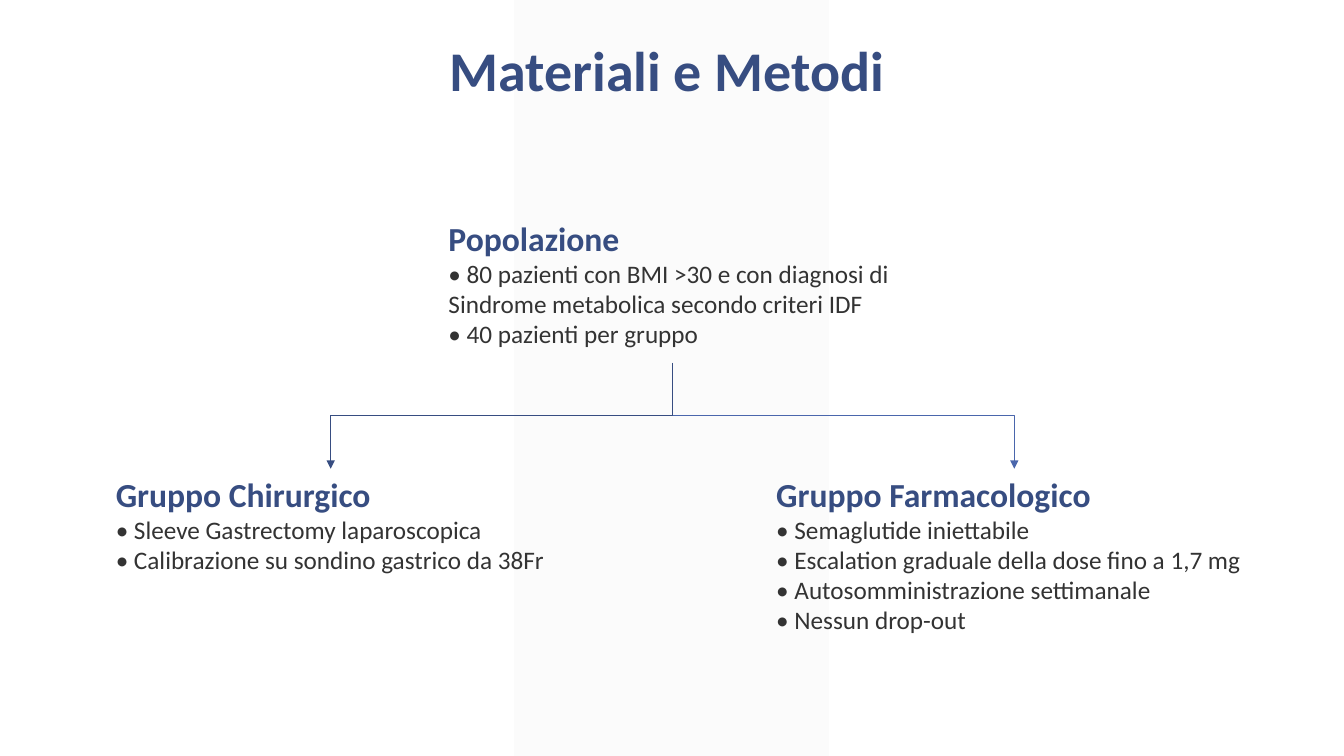
from lxml import etree
from pptx import Presentation, util as u
from pptx.dml.color import RGBColor
from pptx.enum import shapes, text
from pptx.oxml import ns

THEME = {
    "font": "Calibri",
    "navy": RGBColor.from_string("374D81"),
    "blue": RGBColor.from_string("4A66AC"),
    "body": RGBColor.from_string("333333"),
    "band": RGBColor.from_string("F2F2F2"),
    "title_size": u.Pt(40),
    "heading_size": u.Pt(24),
    "body_size": u.Pt(18),
}
TITLE = {"size": THEME["title_size"], "bold": True, "color": THEME["navy"]}
HEADING = {"size": THEME["heading_size"], "bold": True, "color": THEME["navy"]}
BODY = {"size": THEME["body_size"], "bold": False, "color": THEME["body"]}


def write(paragraph, wording, style):
    run = paragraph.add_run()
    run.text = wording
    run.font.name = THEME["font"]
    run.font.color.rgb = style["color"]
    for key in ("size", "bold"):
        setattr(run.font, key, style[key])


def add_xml(parent, tag, **attributes):
    return etree.SubElement(parent, ns.qn(tag), attributes)


deck = Presentation()
deck.slide_width, deck.slide_height = u.Inches(13.33), u.Inches(7.5)
slide = deck.slides.add_slide(deck.slide_layouts[5])

band = slide.shapes.add_shape(
    shapes.MSO_SHAPE.PARALLELOGRAM, u.Inches(5.1), 0, u.Inches(3.12), deck.slide_height
)
band.adjustments[0] = 0
band.shadow.inherit = False
band.line.fill.background()
band.fill.solid()
band.fill.fore_color.rgb = THEME["band"]
band_color = band.fill._xPr.find(ns.qn("a:solidFill"))[0]
add_xml(band_color, "a:alpha", val="30000")
slide.shapes._spTree.insert(2, band._element)

heading = slide.shapes.title
place = {"left": 4.36, "top": 0.3, "width": 4.61, "height": 0.66}
for side, inches in place.items():
    setattr(heading, side, u.Inches(inches))
frame_format = {
    "word_wrap": True,
    "auto_size": text.MSO_AUTO_SIZE.NONE,
    "vertical_anchor": text.MSO_ANCHOR.TOP,
}
for key, value in frame_format.items():
    setattr(heading.text_frame, key, value)
heading_line = heading.text_frame.paragraphs[0]
heading_line.alignment = text.PP_ALIGN.JUSTIFY
heading_line.line_spacing = 1.0
write(heading_line, "Materiali e Metodi", TITLE)

groups = [
    ((4.35, 2.11, 4.64, 1.48), "Popolazione", [
        "80 pazienti con BMI >30 e con diagnosi di Sindrome metabolica secondo criteri IDF",
        "40 pazienti per gruppo",
    ]),
    ((1.05, 4.65, 4.46, 1.37), "Gruppo Chirurgico", [
        "Sleeve Gastrectomy laparoscopica",
        "Calibrazione su sondino gastrico da 38Fr",
    ]),
    ((7.6, 4.65, 4.92, 1.62), "Gruppo Farmacologico", [
        "Semaglutide iniettabile",
        "Escalation graduale della dose fino a 1,7 mg",
        "Autosomministrazione settimanale",
        "Nessun drop-out",
    ]),
]
for position, name, details in groups:
    frame = slide.shapes.add_textbox(*map(u.Inches, position)).text_frame
    for key, value in frame_format.items():
        setattr(frame, key, value)
    write(frame.paragraphs[0], name, HEADING)
    for detail in details:
        write(frame.add_paragraph(), f"• {detail}", BODY)

fork_x, fork_top, fork_bottom, reach = 6.67, 3.6, 4.65, 3.39
drop = fork_bottom - fork_top
middle_y = (fork_top + fork_bottom) / 2
for direction, rotation, color in ((1, 270, THEME["blue"]), (-1, 90, THEME["navy"])):
    middle_x = fork_x + direction * reach / 2
    branch = slide.shapes.add_connector(
        shapes.MSO_CONNECTOR.ELBOW,
        u.Inches(middle_x + direction * drop / 2), u.Inches(middle_y - reach / 2),
        u.Inches(middle_x - direction * drop / 2), u.Inches(middle_y + reach / 2),
    )
    branch.line.color.rgb = color
    branch.line.width = u.Pt(1)
    properties = branch._element.spPr
    properties.find(ns.qn("a:xfrm")).set("rot", str(rotation * 60000))
    add_xml(properties.find(ns.qn("a:ln")), "a:tailEnd", type="triangle")
    add_xml(properties, "a:effectLst")

deck.save("out.pptx")
